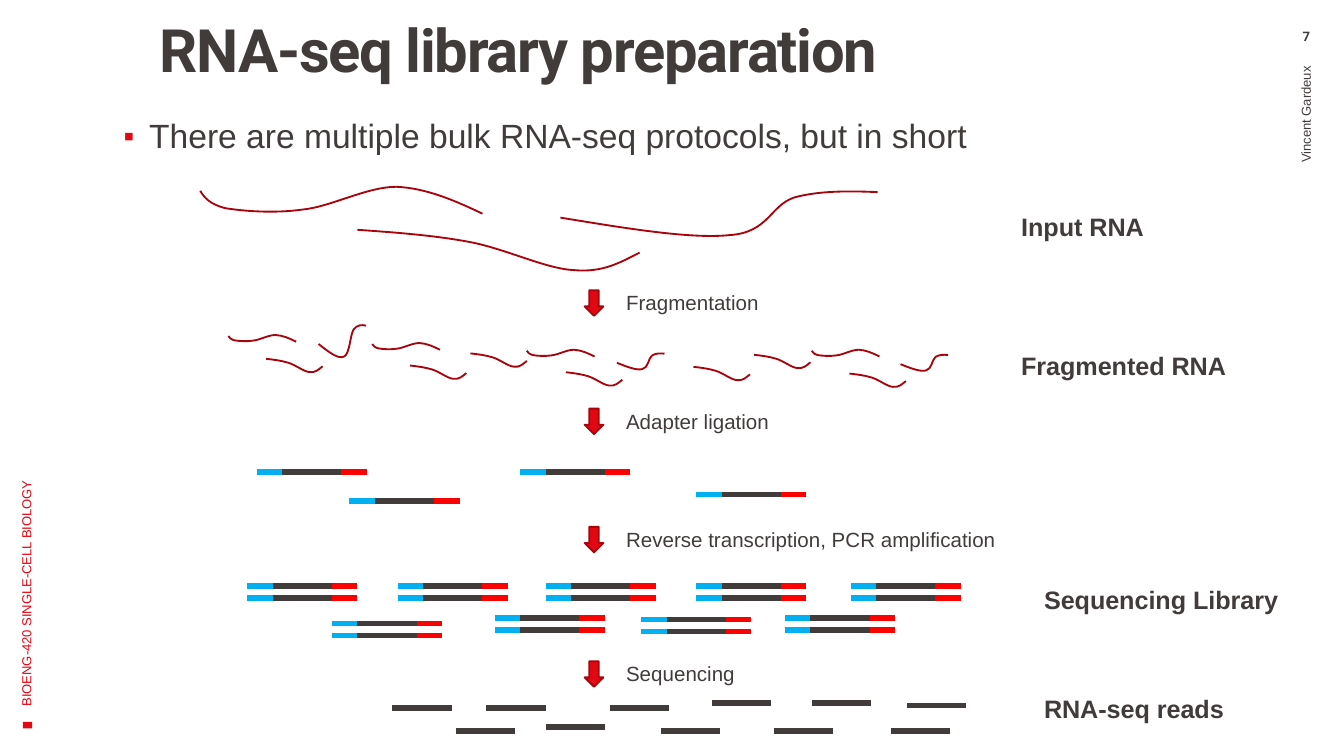
"""Builds a slide on the steps of RNA-seq library preparation."""
import pptx
import pptx.dml.color
import pptx.enum.shapes
import pptx.enum.text
import pptx.oxml
import pptx.oxml.ns
import pptx.util

RGBColor = pptx.dml.color.RGBColor
Align = pptx.enum.text.PP_ALIGN
Anchor = pptx.enum.text.MSO_ANCHOR
Fit = pptx.enum.text.MSO_AUTO_SIZE
Shape = pptx.enum.shapes.MSO_SHAPE
Link = pptx.enum.shapes.MSO_CONNECTOR
qn = pptx.oxml.ns.qn

DARK = RGBColor(0x41, 0x3C, 0x3A)
RED = RGBColor(0xE3, 0x06, 0x13)
WINE = RGBColor(0xA8, 0x04, 0x0E)
BLUE = RGBColor(0x00, 0xB0, 0xF0)
BRIGHT = RGBColor(0xFF, 0x00, 0x00)

TITLE = "RNA-seq library preparation"
POINT = "There are multiple bulk RNA-seq protocols, but in short"
COURSE = "BIOENG-420 SINGLE-CELL BIOLOGY"
AUTHOR = "Vincent Gardeux"
NUMBER = "7"

STAGES = [
    ("Input RNA", 7.5, 1.52, 1.42),
    ("Fragmented RNA", 7.5, 2.56, 1.77),
    ("Sequencing Library", 7.67, 4.3, 2),
    ("RNA-seq reads", 7.67, 5.11, 2),
]
STEPS = [
    ("Fragmentation", 2.11, 1.2),
    ("Adapter ligation", 2.99, 1.27),
    ("Reverse transcription, PCR amplification", 3.87, 2.97),
    ("Sequencing", 4.87, 1.02),
]

CURVES = {
    "wave": [(1.49, 1.42), (1.52, 1.47), (1.56, 1.52), (1.68, 1.55),
             (1.81, 1.57), (2.03, 1.59), (2.25, 1.56), (2.46, 1.54),
             (2.73, 1.39), (2.95, 1.39), (3.17, 1.4), (3.38, 1.49), (3.59, 1.59)],
    "rise": [(4.17, 1.62), (4.66, 1.7), (5.14, 1.78), (5.43, 1.75),
             (5.72, 1.73), (5.73, 1.53), (5.91, 1.47),
             (6.09, 1.42), (6.31, 1.42), (6.53, 1.43)],
    "dip": [(2.66, 1.71), (2.94, 1.73), (3.22, 1.75), (3.49, 1.8),
            (3.76, 1.85), (4.06, 2), (4.27, 2.01),
            (4.49, 2.03), (4.62, 1.95), (4.76, 1.88)],
}
PIECES = [
    ("wave", 0.24, 0.25, [(1.7, 2.5), (2.77, 2.56), (3.92, 2.61), (6.04, 2.61)]),
    ("rise", 0.15, 0.72, [(2.37, 2.56)]),
    ("rise", 0.15, 0.36, [(4.59, 2.7), (6.7, 2.71)]),
    ("dip", 0.2, 0.33, [(1.98, 2.67), (3.05, 2.72), (4.21, 2.77), (3.5, 2.63),
                        (5.16, 2.73), (6.32, 2.78), (5.61, 2.64)]),
]

TAGGED = [(1.91, 3.51), (2.6, 3.73), (3.87, 3.51), (5.18, 3.68)]
PAIRS = [(2.96, 4.36), (3.68, 4.6), (4.06, 4.36), (4.77, 4.61), (5.18, 4.36),
         (5.84, 4.6), (6.33, 4.36), (2.47, 4.64), (1.84, 4.36)]
READS = [(2.92, 5.27), (3.39, 5.44), (3.62, 5.27), (4.06, 5.41), (4.54, 5.27),
         (4.92, 5.44), (5.3, 5.23), (5.76, 5.44), (6.04, 5.23), (6.63, 5.44),
         (6.75, 5.25)]
TAG, READ, GAP = 0.19, 0.44, 0.09


def inch(value):
    return pptx.util.Cm(value * 2.54)


def place(shape, *box):
    shape.left, shape.top, shape.width, shape.height = map(inch, box)


def write(frame, text, size, color=DARK, bold=False, font="Arial"):
    part = frame.paragraphs[0]
    run = part.add_run()
    run.text = text
    run.font.size = pptx.util.Pt(size)
    run.font.name = font
    run.font.bold = bold
    run.font.color.rgb = color
    return part, run


def pad(frame, *sides):
    (frame.margin_left, frame.margin_top,
     frame.margin_right, frame.margin_bottom) = map(inch, sides)


def label(slide, box, text, size, wrap=True, turn=0, **look):
    shape = slide.shapes.add_textbox(*map(inch, box))
    shape.rotation = turn
    shape.text_frame.word_wrap = wrap
    part, run = write(shape.text_frame, text, size, **look)
    return shape.text_frame, part


def block(slide, kind, box, edge=None, turn=0):
    shape = slide.shapes.add_shape(kind, *map(inch, box))
    shape.shadow.inherit = False
    shape.rotation = turn
    shape.fill.solid()
    shape.fill.fore_color.rgb = RED
    if edge is None:
        shape.line.fill.background()
    else:
        shape.line.color.rgb = edge
        shape.line.width = pptx.util.Pt(1)


def bar(slide, left, top, width, color):
    ends = map(inch, (left, top, left + width, top))
    line = slide.shapes.add_connector(Link.STRAIGHT, *ends)
    line.line.color.rgb = color
    line.line.width = pptx.util.Pt(3)
    props = line._element.spPr
    props.append(props.makeelement(qn("a:effectLst"), {}))


def strand(slide, left, top):
    bar(slide, left + TAG, top, READ, DARK)
    bar(slide, left, top, TAG, BLUE)
    bar(slide, left + TAG + READ, top, TAG, BRIGHT)


def curve(slide, kind, start, wide=1, high=1):
    first = CURVES[kind][0]
    spots = [(inch(start[0] + (x - first[0]) * wide),
              inch(start[1] + (y - first[1]) * high)) for x, y in CURVES[kind]]
    pen = slide.shapes.build_freeform(*spots[0])
    pen.add_line_segments(spots[1:], close=False)
    shape = pen.convert_to_shape()
    shape.shadow.inherit = False
    shape.fill.background()
    shape.line.color.rgb = WINE
    shape.line.width = pptx.util.Pt(1)
    trace = next(shape._element.iter(qn("a:path")))
    lines = trace.findall(qn("a:lnTo"))
    for at in range(0, len(lines), 3):
        bend = trace.makeelement(qn("a:cubicBezTo"), {})
        trace.append(bend)
        for line in lines[at:at + 3]:
            bend.append(line[0])
            trace.remove(line)


def head(slide):
    title, body = slide.placeholders
    place(title, 0.99, 0.2, 8.01, 1.17)
    place(body, 0.72, 0.84, 8.55, 3.7)
    for shape, sides in ((title, (0.2, 0, 0.08, 0.05)), (body, (0.2, 0.05, 0.1, 0.05))):
        pad(shape.text_frame, *sides)
        shape.text_frame.auto_size = Fit.NONE
        shape.text_frame.vertical_anchor = Anchor.TOP
    part, run = write(title.text_frame, TITLE, 32, bold=True, font="Roboto")
    part.alignment = Align.LEFT
    part.line_spacing = 0.8
    run._r.get_or_add_rPr().set("spc", "-70")
    part, run = write(body.text_frame, POINT, 18)
    props = part._p.get_or_add_pPr()
    props.set("marL", str(inch(0.19)))
    props.set("indent", str(inch(-0.19)))
    space = 'xmlns:a="http://schemas.openxmlformats.org/drawingml/2006/main"'
    for mark in (f'<a:buClr {space}><a:srgbClr val="{RED}"/></a:buClr>',
                 f'<a:buSzPct {space} val="90000"/>',
                 f'<a:buFont {space} typeface="Arial"/>',
                 f'<a:buChar {space} char="▪"/>'):
        props.append(pptx.oxml.parse_xml(mark))
    part.line_spacing = 0.9
    part.space_before = pptx.util.Pt(0)


def margin(slide):
    block(slide, Shape.RECTANGLE, (0.18, 5.36, 0.05, 0.07), turn=270)
    frame, part = label(slide, (-1.63, 3.33, 3.65, 0.4), COURSE, 7, turn=270, color=RED)
    frame.vertical_anchor = Anchor.MIDDLE
    frame, part = label(slide, (7.78, 2.05, 3.87, 0.56), AUTHOR, 7, turn=270)
    frame.vertical_anchor = Anchor.MIDDLE
    part.alignment = Align.RIGHT
    frame, part = label(slide, (9.44, 0.21, 0.56, 0.18), NUMBER, 7, bold=True, font="Roboto")
    pad(frame, 0.1, 0, 0.1, 0)
    part.alignment = Align.CENTER


def main():
    deck = pptx.Presentation()
    deck.slide_width = pptx.util.Cm(25.4)
    deck.slide_height = deck.slide_width * 9 // 16
    slide = deck.slides.add_slide(deck.slide_layouts[1])
    head(slide)
    margin(slide)
    for kind, spots in CURVES.items():
        curve(slide, kind, spots[0])
    for kind, wide, high, starts in PIECES:
        for start in starts:
            curve(slide, kind, start, wide, high)
    for text, left, top, width in STAGES:
        label(slide, (left, top, width, 0.33), text, 13.5, bold=True)
    for text, top, width in STEPS:
        block(slide, Shape.DOWN_ARROW, (4.35, top + 0.05, 0.14, 0.19), edge=WINE)
        label(slide, (4.56, top, width, 0.29), text, 11, wrap=False)
    for left, top in TAGGED:
        strand(slide, left, top)
    for left, top in PAIRS:
        strand(slide, left, top)
        strand(slide, left, top + GAP)
    for left, top in READS:
        bar(slide, left, top, READ, DARK)
    deck.save("out.pptx")


if __name__ == "__main__":
    main()
